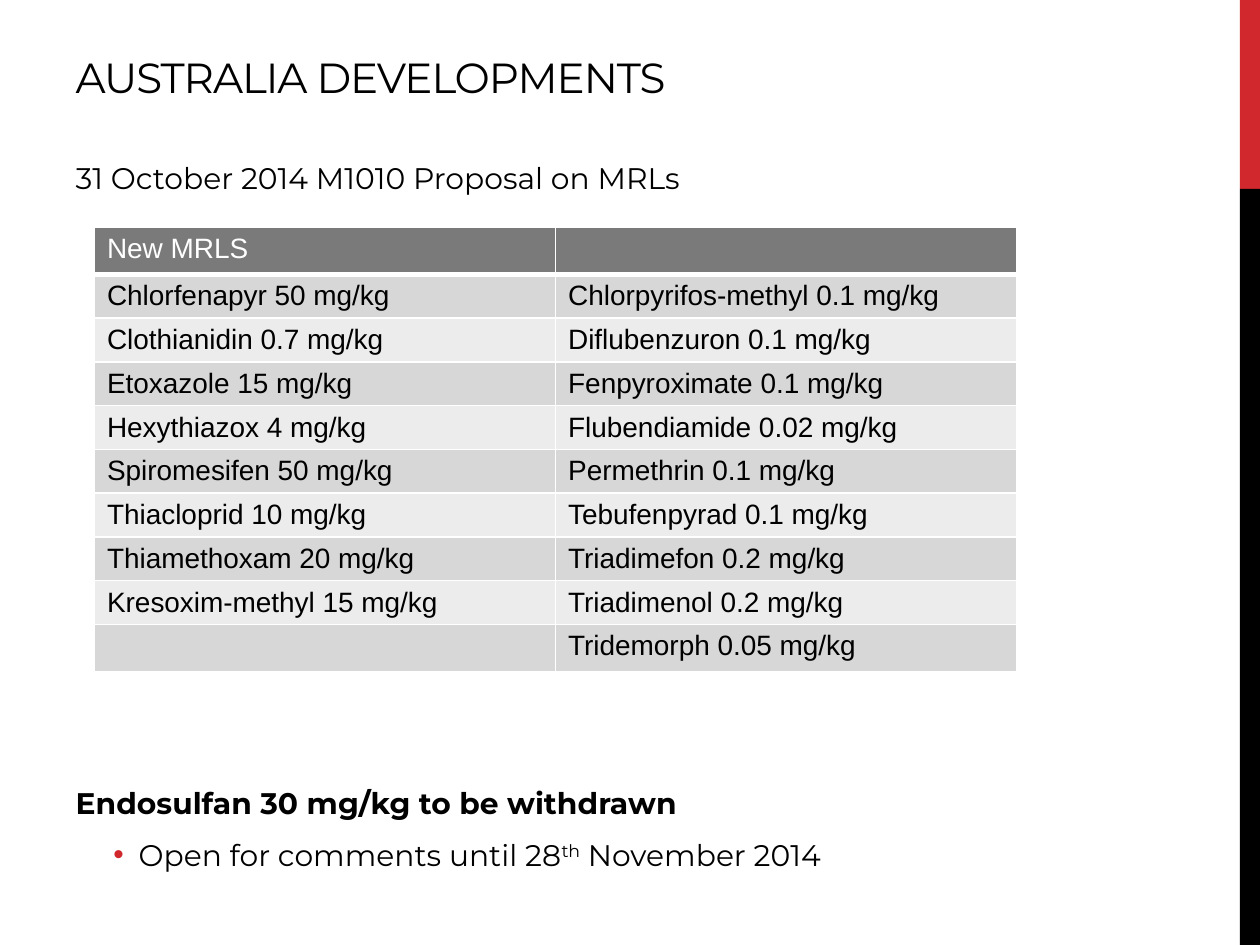
from lxml.etree import SubElement
from pptx import Presentation
from pptx.dml.color import RGBColor
from pptx.enum.shapes import MSO_SHAPE
from pptx.enum.text import MSO_ANCHOR, MSO_AUTO_SIZE, PP_ALIGN
from pptx.oxml.ns import qn
from pptx.util import Pt

COLORS = {"accent": "D1282E", "black": "000000", "white": "FFFFFF",
          "header": "7A7A7A", "odd": "D7D7D7", "even": "ECECEC"}
HEADING_FONT, TABLE_FONT = "Montserrat", "Arial"
W, H = 720, 540

MRLS = [
    ("New MRLS", ""),
    ("Chlorfenapyr 50 mg/kg", "Chlorpyrifos-methyl 0.1 mg/kg"),
    ("Clothianidin 0.7 mg/kg", "Diflubenzuron 0.1 mg/kg"),
    ("Etoxazole 15 mg/kg", "Fenpyroximate 0.1 mg/kg"),
    ("Hexythiazox 4 mg/kg", "Flubendiamide 0.02 mg/kg"),
    ("Spiromesifen 50 mg/kg", "Permethrin 0.1 mg/kg"),
    ("Thiacloprid 10 mg/kg", "Tebufenpyrad 0.1 mg/kg"),
    ("Thiamethoxam 20 mg/kg", "Triadimefon 0.2 mg/kg"),
    ("Kresoxim-methyl 15 mg/kg", "Triadimenol 0.2 mg/kg"),
    ("", "Tridemorph 0.05 mg/kg"),
]


def rgb(name):
    return RGBColor.from_string(COLORS[name])


def place(sp, left, top, width, height):
    sp.left, sp.top, sp.width, sp.height = map(Pt, (left, top, width, height))


def add_text(p, text, size=17, font=HEADING_FONT, color="black", bold=False,
             spacing=None, baseline=None):
    """Add a run; spacing is in hundredths of a point, baseline in 1/1000 %."""
    r = p.add_run()
    r.text = text
    r.font.size, r.font.name, r.font.bold = Pt(size), font, bold
    r.font.color.rgb = rgb(color)
    for key, value in (("spc", spacing), ("baseline", baseline)):
        if value is not None:
            r.font._element.set(key, str(value))


def format_paragraph(p, before=0, after=0, left=0, hanging=0, bullet=None):
    p.alignment = PP_ALIGN.LEFT
    p.space_before, p.space_after = Pt(before), Pt(after)
    pPr = p._p.get_or_add_pPr()
    pPr.set("marL", str(Pt(left)))
    pPr.set("indent", str(-Pt(hanging)))
    if bullet:
        color = SubElement(pPr, qn("a:buClr"))
        SubElement(color, qn("a:srgbClr"), val=COLORS["accent"])
        SubElement(pPr, qn("a:buFont"), typeface=TABLE_FONT)
        SubElement(pPr, qn("a:buChar"), char=bullet)
    else:
        SubElement(pPr, qn("a:buNone"))


def add_bar(s, top, height, color):
    sp = s.shapes.add_shape(MSO_SHAPE.RECTANGLE, Pt(708.5), Pt(top),
                            Pt(W - 708.5), Pt(height))
    sp.shadow.inherit = False
    sp.fill.solid()
    sp.fill.fore_color.rgb = rgb(color)
    sp.line.fill.background()


def add_title(s, text):
    sp = s.shapes.title
    place(sp, 36, 12.25, 456, 49.5)
    tf = sp.text_frame
    tf.vertical_anchor, tf.auto_size = MSO_ANCHOR.BOTTOM, MSO_AUTO_SIZE.NONE
    format_paragraph(tf.paragraphs[0])
    add_text(tf.paragraphs[0], text, size=24, spacing=-60)


def add_body(s):
    sp = s.placeholders[1]
    place(sp, 36, 87.75, 648, 373)
    tf = sp.text_frame
    tf.vertical_anchor, tf.auto_size = MSO_ANCHOR.TOP, MSO_AUTO_SIZE.NONE
    p = tf.paragraphs[0]
    format_paragraph(p, after=6)
    add_text(p, "31 October 2014 M1010 Proposal on MRLs")

    p = tf.add_paragraph()
    format_paragraph(p, before=330.5, after=6)  # leaves room for the table
    add_text(p, "Endosulfan 30 mg/kg to be withdrawn", bold=True)

    p = tf.add_paragraph()
    p.level = 1
    format_paragraph(p, before=3.4, left=36, hanging=14.4, bullet="•")
    add_text(p, "Open for comments until 28")
    add_text(p, "th", baseline=30000)
    add_text(p, " November 2014")


def set_borders(cell, bottom):
    tcPr = cell._tc.get_or_add_tcPr()
    for side, width in (("L", 1), ("R", 1), ("T", 1), ("B", bottom)):
        ln = SubElement(tcPr, qn(f"a:ln{side}"), w=str(Pt(width)))
        fill = SubElement(ln, qn("a:solidFill"))
        SubElement(fill, qn("a:srgbClr"), val=COLORS["white"])


def add_mrl_table(s, rows):
    row_height = 24.5
    table = s.shapes.add_table(len(rows), 2, Pt(54), Pt(130), Pt(527),
                               Pt(row_height * len(rows))).table
    for i, row in enumerate(rows):
        table.rows[i].height = Pt(row_height)
        fill = "header" if i == 0 else "odd" if i % 2 else "even"
        for j, text in enumerate(row):
            cell = table.cell(i, j)
            set_borders(cell, bottom=3 if i == 0 else 1)
            cell.fill.solid()
            cell.fill.fore_color.rgb = rgb(fill)
            p = cell.text_frame.paragraphs[0]
            if text:
                add_text(p, text, size=16, font=TABLE_FONT,
                         color="black" if i else "white")
            else:
                SubElement(p._p, qn("a:endParaRPr"), sz="1600")


def main():
    prs = Presentation()
    prs.slide_width, prs.slide_height = Pt(W), Pt(H)
    s = prs.slides.add_slide(prs.slide_layouts[1])
    add_bar(s, 0, 108, "accent")
    add_bar(s, 108, H - 108, "black")
    add_title(s, "AUSTRALIA DEVELOPMENTS")
    add_body(s)
    add_mrl_table(s, MRLS)
    prs.save("out.pptx")


if __name__ == "__main__":
    main()
